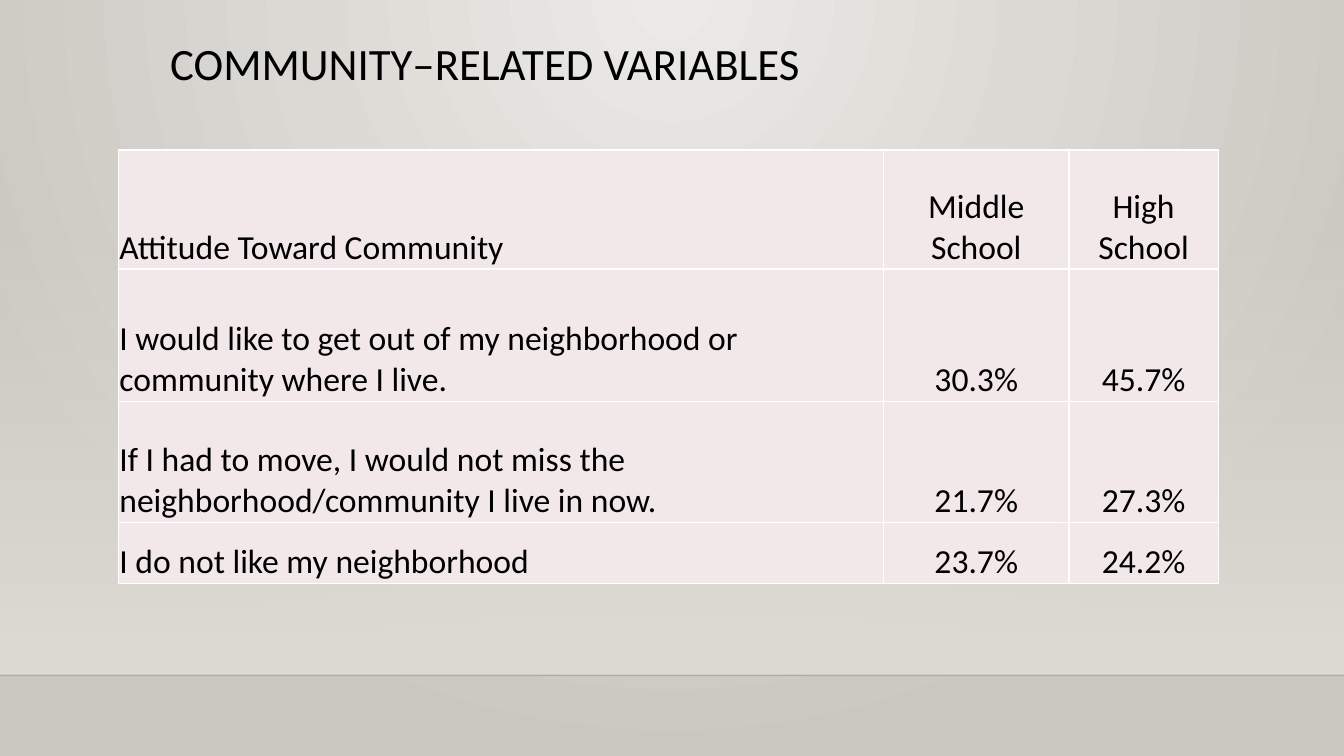
import pptx
import pptx.dml.color
import pptx.enum.shapes
import pptx.enum.text
import pptx.oxml.ns
import pptx.util
from lxml import etree

Pt = pptx.util.Pt
qn = pptx.oxml.ns.qn


def color(hex_string):
    return pptx.dml.color.RGBColor.from_string(hex_string)


def add_element(parent, tag, **attributes):
    return etree.SubElement(parent, qn(tag), attributes)


presentation = pptx.Presentation()
presentation.slide_width = Pt(960)
presentation.slide_height = Pt(540)
slide = presentation.slides.add_slide(presentation.slide_layouts[6])

# Background: light glow from the top centre
background = slide.background.fill
background.gradient()
for stop, shade in zip(background.gradient_stops, ("ECEAE7", "CAC7C1")):
    stop.color.rgb = color(shade)
gradient = slide.element.find(".//" + qn("a:gradFill"))
gradient.remove(gradient.find(qn("a:lin")))
glow = add_element(gradient, "a:path", path="circle")
add_element(glow, "a:fillToRect", l="43000", t="0", r="43000", b="100000")

# Wall fading in towards the floor line
wall = slide.shapes.add_shape(
    pptx.enum.shapes.MSO_SHAPE.RECTANGLE, Pt(0), Pt(159), Pt(960), Pt(323.4))
wall.shadow.inherit = False
wall.line.fill.background()
wall.fill.gradient()
wall.fill.gradient_angle = 270
for stop in wall.fill.gradient_stops:
    stop.color.rgb = color("DFDBD5")
top_color = wall.element.find(".//" + qn("a:srgbClr"))
add_element(top_color, "a:alpha", val="0")

floor_line = slide.shapes.add_connector(
    pptx.enum.shapes.MSO_CONNECTOR.STRAIGHT, Pt(0), Pt(482.4), Pt(960), Pt(482.4))
floor_line.line.width = Pt(1)
floor_line.line.color.rgb = color("000001")
line_color = floor_line.element.find(".//" + qn("a:srgbClr"))
add_element(line_color, "a:alpha", val="20000")
add_element(floor_line.element.spPr, "a:effectLst")

# Title
title = slide.shapes.add_textbox(Pt(114.5), Pt(26.6), Pt(756), Pt(67.7))
title.text_frame.word_wrap = True
paragraph = title.text_frame.paragraphs[0]
paragraph.text = "COMMUNITY–RELATED VARIABLES"
paragraph.line_spacing = 0.9
paragraph.font.size = Pt(32)
paragraph.font.name = "Calibri"
paragraph.font.color.rgb = color("000000")

# Table
rows = [
    ("Attitude Toward Community", "Middle School", "High School"),
    ("I would like to get out of my neighborhood or community where I live.",
     "30.3%", "45.7%"),
    ("If I had to move, I would not miss the neighborhood/community I live in now.",
     "21.7%", "27.3%"),
    ("I do not like my neighborhood", "23.7%", "24.2%"),
]
column_widths = (546.5, 132.5, 106.5)
row_heights = (85, 94.8, 86.4, 43.4)
table = slide.shapes.add_table(
    len(rows), len(column_widths), Pt(84.6), Pt(107.2),
    Pt(sum(column_widths)), Pt(sum(row_heights))).table
for column, width in zip(table.columns, column_widths):
    column.width = Pt(width)
for row, height, texts in zip(table.rows, row_heights, rows):
    row.height = Pt(height)
    for index, (cell, text) in enumerate(zip(row.cells, texts)):
        cell.margin_left = cell.margin_right = Pt(0.7)
        cell.margin_top = cell.margin_bottom = Pt(0.7)
        cell.vertical_anchor = pptx.enum.text.MSO_ANCHOR.BOTTOM
        properties = cell._tc.get_or_add_tcPr()
        for side in ("a:lnL", "a:lnR", "a:lnT", "a:lnB"):
            border = add_element(properties, side, w=str(Pt(1)))
            add_element(add_element(border, "a:solidFill"), "a:srgbClr", val="FFFFFF")
        cell.fill.solid()
        cell.fill.fore_color.rgb = color("F3E8E9")
        paragraph = cell.text_frame.paragraphs[0]
        paragraph.text = text
        if index > 0:
            paragraph.alignment = pptx.enum.text.PP_ALIGN.CENTER
        paragraph.font.size = Pt(24)
        paragraph.font.name = "Calibri"
        paragraph.font.bold = False
        paragraph.font.color.rgb = color("000000")

presentation.save("out.pptx")
